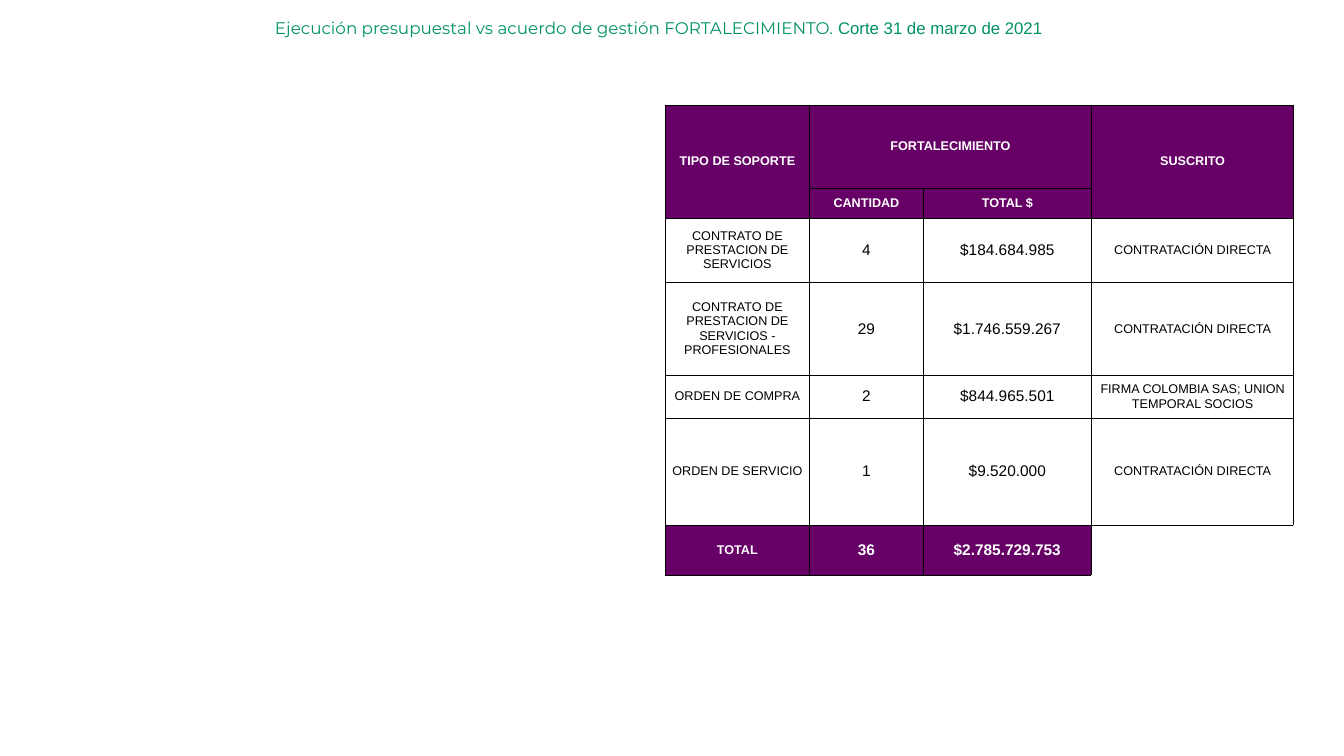
from lxml import etree
from pptx import Presentation
from pptx import util as u
from pptx.dml.color import RGBColor
from pptx.enum import text
from pptx.oxml import ns

COLOURS = {"green": "009267", "purple": "660066", "white": "FFFFFF", "black": "000000"}
COLUMN_WIDTHS = [103, 81.4, 120, 144.6]
ROW_HEIGHTS = [59.2, 21.6, 45.8, 66.4, 30.6, 76.5, 35.8]
HEADER_ROWS = 2
NUMBER_COLUMNS = (1, 2)
MERGES = [((0, 0), (1, 0)), ((0, 1), (0, 2)), ((0, 3), (1, 3))]
ROWS = [
    ["TIPO DE SOPORTE", "FORTALECIMIENTO", "", "SUSCRITO"],
    ["", "CANTIDAD", "TOTAL $", ""],
    ["CONTRATO DE PRESTACION DE SERVICIOS", "4", "$184.684.985", "CONTRATACIÓN DIRECTA"],
    ["CONTRATO DE PRESTACION DE SERVICIOS - PROFESIONALES", "29", "$1.746.559.267",
     "CONTRATACIÓN DIRECTA"],
    ["ORDEN DE COMPRA", "2", "$844.965.501", "FIRMA COLOMBIA SAS; UNION TEMPORAL SOCIOS"],
    ["ORDEN DE SERVICIO", "1", "$9.520.000", "CONTRATACIÓN DIRECTA"],
    ["TOTAL", "36", "$2.785.729.753", ""],
]


def apply_format(target, values):
    for name, value in values.items():
        setattr(target, name, value)


class SlideBuilder:
    def __init__(self, slide):
        self.slide = slide

    def add_run(self, paragraph, words, colour, **font):
        run = paragraph.add_run()
        run.text = words
        apply_format(run.font, font)
        run.font.color.rgb = RGBColor.from_string(COLOURS[colour])

    def set_title(self, left, top, width, height, runs):
        """Place the title; runs holds pairs of words and font name."""
        title = self.slide.shapes.title
        apply_format(title, {"left": u.Pt(left), "top": u.Pt(top),
                             "width": u.Pt(width), "height": u.Pt(height)})
        apply_format(title.text_frame, {
            "word_wrap": True,
            "vertical_anchor": text.MSO_ANCHOR.TOP,
            "auto_size": text.MSO_AUTO_SIZE.SHAPE_TO_FIT_TEXT,
        })
        paragraph = title.text_frame.paragraphs[0]
        paragraph.alignment = text.PP_ALIGN.LEFT
        for words, font_name in runs:
            self.add_run(paragraph, words, "green", name=font_name, size=u.Pt(12), bold=False)

    def set_borders(self, cell, sides):
        properties = cell._tc.get_or_add_tcPr()
        for side in sides:
            line = etree.SubElement(properties, ns.qn(f"a:ln{side}"), w=str(u.Pt(0.5)))
            fill = etree.SubElement(line, ns.qn("a:solidFill"))
            etree.SubElement(fill, ns.qn("a:srgbClr"), val=COLOURS["black"])

    def fill_cell(self, cell, words, fill, size):
        """Write and paint a cell; a fill of None leaves it clear."""
        apply_format(cell, {"margin_left": 0, "margin_right": 0, "margin_top": 0,
                            "margin_bottom": 0, "vertical_anchor": text.MSO_ANCHOR.MIDDLE})
        self.set_borders(cell, "LRTB" if fill else "LT")
        if fill:
            cell.fill.solid()
            cell.fill.fore_color.rgb = RGBColor.from_string(COLOURS[fill])
        else:
            cell.fill.background()
        if words:
            dark = fill == "purple"
            paragraph = cell.text_frame.paragraphs[0]
            paragraph.alignment = text.PP_ALIGN.CENTER
            self.add_run(paragraph, words, "white" if dark else "black",
                         name="Arial", size=u.Pt(size), bold=dark)

    def add_budget_table(self, left, top):
        frame = self.slide.shapes.add_table(
            len(ROWS), len(COLUMN_WIDTHS), u.Pt(left), u.Pt(top),
            u.Pt(sum(COLUMN_WIDTHS)), u.Pt(sum(ROW_HEIGHTS)))
        table = frame.table
        apply_format(table, {"first_row": False, "horz_banding": False})
        for column, width in zip(table.columns, COLUMN_WIDTHS):
            column.width = u.Pt(width)
        for row, height in zip(table.rows, ROW_HEIGHTS):
            row.height = u.Pt(height)
        total_row = len(ROWS) - 1
        for i, row in enumerate(ROWS):
            for j, words in enumerate(row):
                fill = "purple" if i < HEADER_ROWS or i == total_row else "white"
                if i == total_row and not words:
                    fill = None
                size = 11 if i >= HEADER_ROWS and j in NUMBER_COLUMNS else 9
                self.fill_cell(table.cell(i, j), words, fill, size)
        for first, last in MERGES:
            table.cell(*first).merge(table.cell(*last))


def main():
    presentation = Presentation()
    apply_format(presentation, {"slide_width": u.Pt(960), "slide_height": u.Pt(540)})
    builder = SlideBuilder(presentation.slides.add_slide(presentation.slide_layouts[5]))
    builder.set_title(189.2, 9, 770.4, 21.6, [
        ("Ejecución presupuestal vs acuerdo de gestión FORTALECIMIENTO. ", "Montserrat"),
        ("Corte 31 de marzo de 2021", "Arial"),
    ])
    builder.add_budget_table(475.2, 75)
    presentation.save("out.pptx")


if __name__ == "__main__":
    main()
